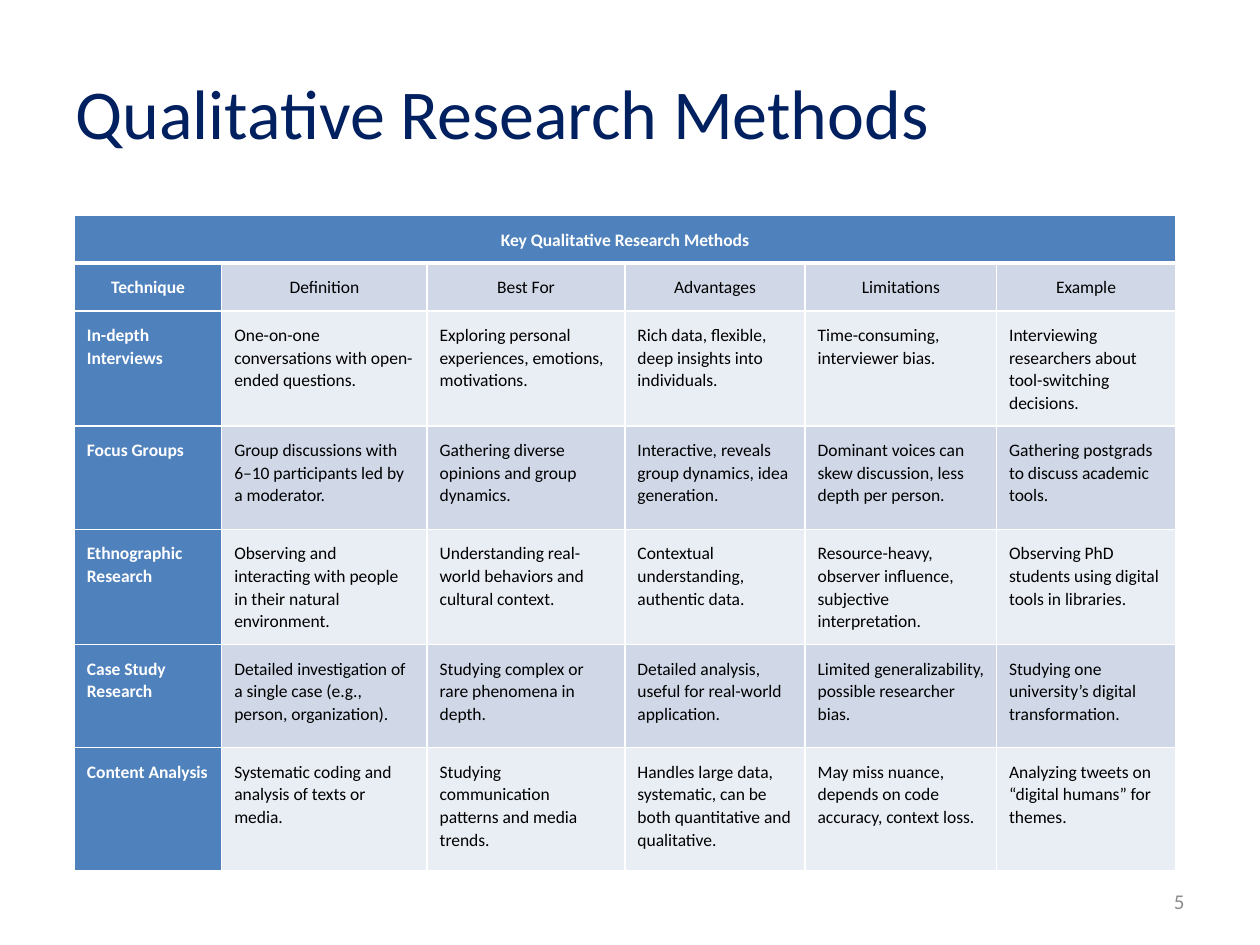
"""Build a slide with a table of qualitative research methods."""
from lxml.etree import SubElement
from pptx import Presentation
from pptx.dml.color import RGBColor
from pptx.enum.text import MSO_ANCHOR, PP_ALIGN
from pptx.oxml.ns import qn
from pptx.util import Inches, Pt

NAVY, BLUE, BAND, PALE = "002060", "4F81BD", "D0D8E8", "E9EDF4"
WHITE, BLACK, GREY = "FFFFFF", "000000", "8C8C8C"


def style(p, size, color, bold=False, align=PP_ALIGN.LEFT):
    p.alignment = align
    for r in p.runs:
        r.font.name, r.font.size, r.font.bold = "Calibri", Pt(size), bold
        r.font.color.rgb = RGBColor.from_string(color)


def add_border(cell, side, width):
    line = SubElement(cell._tc.get_or_add_tcPr(), qn(f"a:ln{side}"), w=str(Pt(width)))
    SubElement(SubElement(line, qn("a:solidFill")), qn("a:srgbClr"), val=WHITE)


prs = Presentation()
prs.slide_width, prs.slide_height = Inches(10), Inches(7.5)
s = prs.slides.add_slide(prs.slide_layouts[5])

title = s.shapes.title
title.left, title.top, title.width, title.height = map(Inches, (0.5, 0.3, 9, 1.17))
tf = title.text_frame
tf.text = "Qualitative Research Methods"
tf.vertical_anchor = MSO_ANCHOR.MIDDLE
style(tf.paragraphs[0], 40, NAVY)

number = s.shapes.add_textbox(*map(Inches, (7.17, 6.95, 2.33, 0.4)))
tf = number.text_frame
tf.text = "5"
tf.word_wrap = True
tf.vertical_anchor = MSO_ANCHOR.MIDDLE
style(tf.paragraphs[0], 12, GREY, align=PP_ALIGN.RIGHT)

rows = [
    ["Key Qualitative Research Methods", "", "", "", "", ""],
    ["Technique", "Definition", "Best For", "Advantages", "Limitations", "Example"],
    ["In-depth Interviews",
     "One-on-one conversations with open-ended questions.",
     "Exploring personal experiences, emotions, motivations.",
     "Rich data, flexible, deep insights into individuals.",
     "Time-consuming, interviewer bias.",
     "Interviewing researchers about tool-switching decisions."],
    ["Focus Groups",
     "Group discussions with 6–10 participants led by a moderator.",
     "Gathering diverse opinions and group dynamics.",
     "Interactive, reveals group dynamics, idea generation.",
     "Dominant voices can skew discussion, less depth per person.",
     "Gathering postgrads to discuss academic tools."],
    ["Ethnographic Research",
     "Observing and interacting with people in their natural environment.",
     "Understanding real-world behaviors and cultural context.",
     "Contextual understanding, authentic data.",
     "Resource-heavy, observer influence, subjective interpretation.",
     "Observing PhD students using digital tools in libraries."],
    ["Case Study Research",
     "Detailed investigation of a single case (e.g., person, organization).",
     "Studying complex or rare phenomena in depth.",
     "Detailed analysis, useful for real-world application.",
     "Limited generalizability, possible researcher bias.",
     "Studying one university’s digital transformation."],
    ["Content Analysis",
     "Systematic coding and analysis of texts or media.",
     "Studying communication patterns and media trends.",
     "Handles large data, systematic, can be both quantitative and qualitative.",
     "May miss nuance, depends on code accuracy, context loss.",
     "Analyzing tweets on “digital humans” for themes."],
]
col_widths = [1.17, 1.63, 1.57, 1.43, 1.52, 1.42]
row_heights = [0.35] * 2 + [0.82] * 4 + [0.98]

frame = s.shapes.add_table(len(rows), len(col_widths), Inches(0.59), Inches(1.71),
                           Inches(sum(col_widths)), Inches(sum(row_heights)))
table = frame.table
table.first_col = True
for column, width in zip(table.columns, col_widths):
    column.width = Inches(width)
for row, height in zip(table.rows, row_heights):
    row.height = Inches(height)
table.cell(0, 0).merge(table.cell(0, len(col_widths) - 1))

for i, texts in enumerate(rows):
    for j, text in enumerate(texts):
        cell = table.cell(i, j)
        heading = i == 0 or j == 0
        cell.margin_left = cell.margin_right = Inches(0.1)
        cell.margin_top = cell.margin_bottom = Inches(0.1)
        for side in "LRTB":
            add_border(cell, side, 3 if (i, side) in [(0, "B"), (1, "T")] else 1)
        cell.fill.solid()
        cell.fill.fore_color.rgb = RGBColor.from_string(
            BLUE if heading else BAND if i % 2 else PALE)
        if text:
            cell.text_frame.text = text
            p = cell.text_frame.paragraphs[0]
            p.line_spacing = 1.07
            style(p, 10, WHITE if heading else BLACK, heading,
                  PP_ALIGN.CENTER if i < 2 else PP_ALIGN.LEFT)

prs.save("out.pptx")
